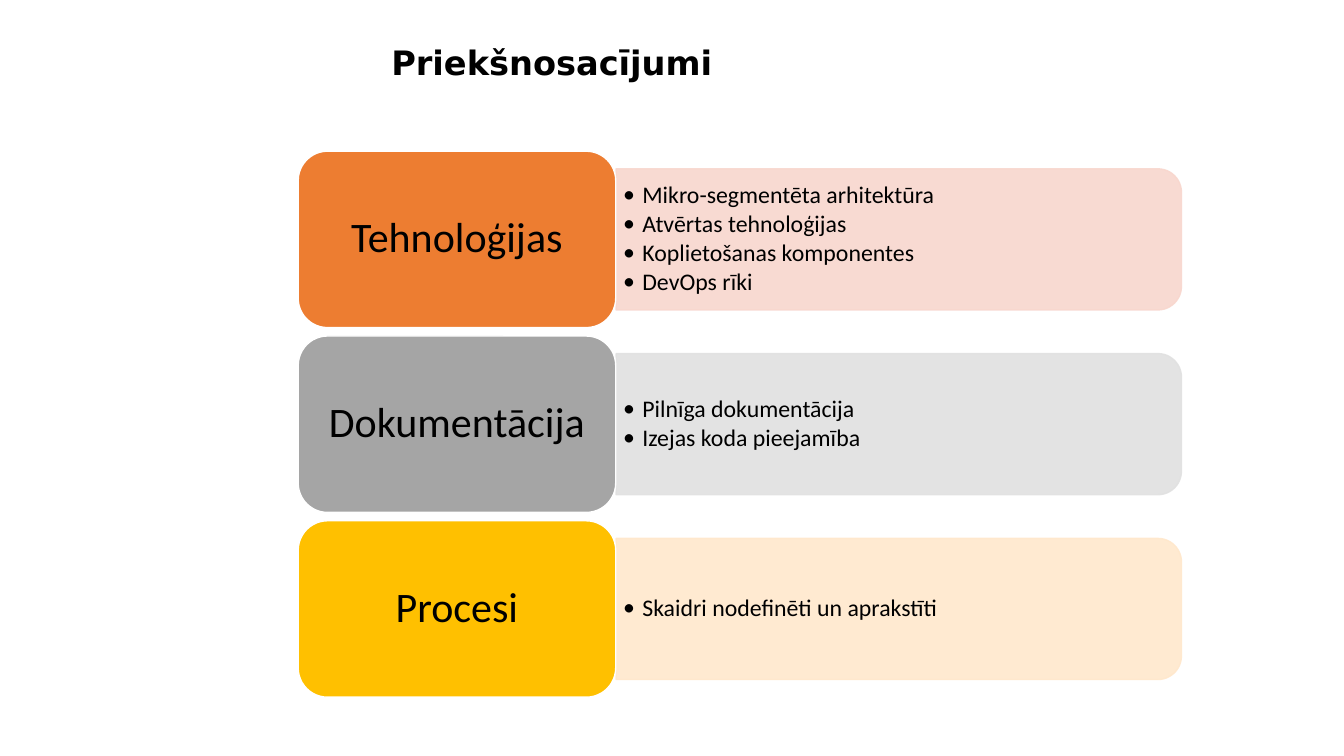
from lxml.etree import SubElement
from pptx import Presentation
from pptx.dml.color import RGBColor
from pptx.enum.shapes import MSO_SHAPE as Shape
from pptx.enum.text import MSO_ANCHOR as Anchor, PP_ALIGN as Align
from pptx.oxml.ns import qn
from pptx.util import Inches, Pt

COLORS = {
    "text": "000000", "white": "FFFFFF",
    "orange": "ED7D31", "orange_tint": "F8D7CE",
    "gray": "A5A5A5", "gray_tint": "E1E1E1",
    "gold": "FFC000", "gold_tint": "FFE8CC",
}
COLS, ROWS = 160, 90
ROW_TOP, ROW_PITCH, ROW_HEIGHT = 18, 22, 21
LABEL_LEFT, LABEL_WIDTH = 35.5, 37.8
PANEL_LEFT, PANEL_WIDTH, PANEL_HEIGHT = 73.35, 67.3, 16.8
SECTIONS = [
    ("Tehnoloģijas", "orange", ["Mikro-segmentēta arhitektūra", "Atvērtas tehnoloģijas",
                                "Koplietošanas komponentes", "DevOps rīki"]),
    ("Dokumentācija", "gray", ["Pilnīga dokumentācija", "Izejas koda pieejamība"]),
    ("Procesi", "gold", ["Skaidri nodefinēti un aprakstīti"]),
]


class Deck:
    """Draws styled elements on one slide laid out on a grid of columns and rows."""

    def __init__(self):
        self.prs = Presentation()
        self.prs.slide_width, self.prs.slide_height = Inches(13.33), Inches(7.5)
        self.s = self.prs.slides.add_slide(self.prs.slide_layouts[6])

    def frame(self, left, top, width, height):
        x, y = self.prs.slide_width / COLS, self.prs.slide_height / ROWS
        return [round(v) for v in (left * x, top * y, width * x, height * y)]

    def shape(self, kind, frame, fill, line, alpha=None):
        sp = self.s.shapes.add_shape(kind, *frame)
        sp.shadow.inherit = False
        sp.fill.solid()
        sp.fill.fore_color.rgb = RGBColor.from_string(COLORS[fill])
        sp.line.color.rgb = RGBColor.from_string(COLORS[line])
        sp.line.width = Pt(1)
        if alpha:
            for clr in sp._element.spPr.iter(qn("a:srgbClr")):
                SubElement(clr, qn("a:alpha"), val=str(alpha * 1000))
        return sp

    def panel(self, middle, fill):
        left, top, width, height = self.frame(
            PANEL_LEFT, middle - PANEL_HEIGHT / 2, PANEL_WIDTH, PANEL_HEIGHT)
        turn = (width - height) // 2
        sp = self.shape(Shape.ROUND_2_SAME_RECTANGLE,
                        (left + turn, top - turn, height, width), fill, fill, 90)
        sp.rotation = 90

    def text(self, frame, lines, size, font="Calibri", bold=False, inset=(0.1, 0.05),
             anchor=Anchor.MIDDLE, align=Align.LEFT, after=0, bullet=False):
        tf = self.s.shapes.add_textbox(*frame).text_frame
        tf.word_wrap = True
        tf.vertical_anchor = anchor
        tf.margin_left = tf.margin_right = Inches(inset[0])
        tf.margin_top = tf.margin_bottom = Inches(inset[1])
        for i, line in enumerate(lines):
            p = tf.add_paragraph() if i else tf.paragraphs[0]
            p.alignment, p.line_spacing, p.space_after = align, 0.9, Pt(after)
            if bullet:
                p.level = 1
                pPr = p._p.get_or_add_pPr()
                pPr.set("marL", str(Inches(0.19)))
                pPr.set("indent", str(Inches(-0.19)))
                SubElement(pPr, qn("a:buFont"), typeface="Calibri")
                SubElement(pPr, qn("a:buChar"), char="•")
            r = p.add_run()
            r.text = line
            r.font.name, r.font.size, r.font.bold = font, Pt(size), bold
            r.font.color.rgb = RGBColor.from_string(COLORS["text"])

    def title(self, text):
        self.text(self.frame(45.4, 5, 106.7, 13.6), [text], 24, "DejaVu Sans", True,
                  anchor=Anchor.TOP)

    def section(self, index, name, color, points):
        top = ROW_TOP + index * ROW_PITCH
        middle = top + ROW_HEIGHT / 2
        self.panel(middle, color + "_tint")
        self.text(self.frame(PANEL_LEFT, middle - 7.55, 66.5, 15.1), points, 17,
                  inset=(0.07, 0.04), after=2.3, bullet=True)
        self.shape(Shape.ROUNDED_RECTANGLE,
                   self.frame(LABEL_LEFT, top, LABEL_WIDTH, ROW_HEIGHT), color, "white")
        self.text(self.frame(LABEL_LEFT + 1, top + 1, LABEL_WIDTH - 2, ROW_HEIGHT - 2),
                  [name], 30, inset=(0.12, 0.06), align=Align.CENTER)


def main():
    deck = Deck()
    deck.title("Priekšnosacījumi")
    for i, section in enumerate(SECTIONS):
        deck.section(i, *section)
    deck.prs.save("out.pptx")


if __name__ == "__main__":
    main()
